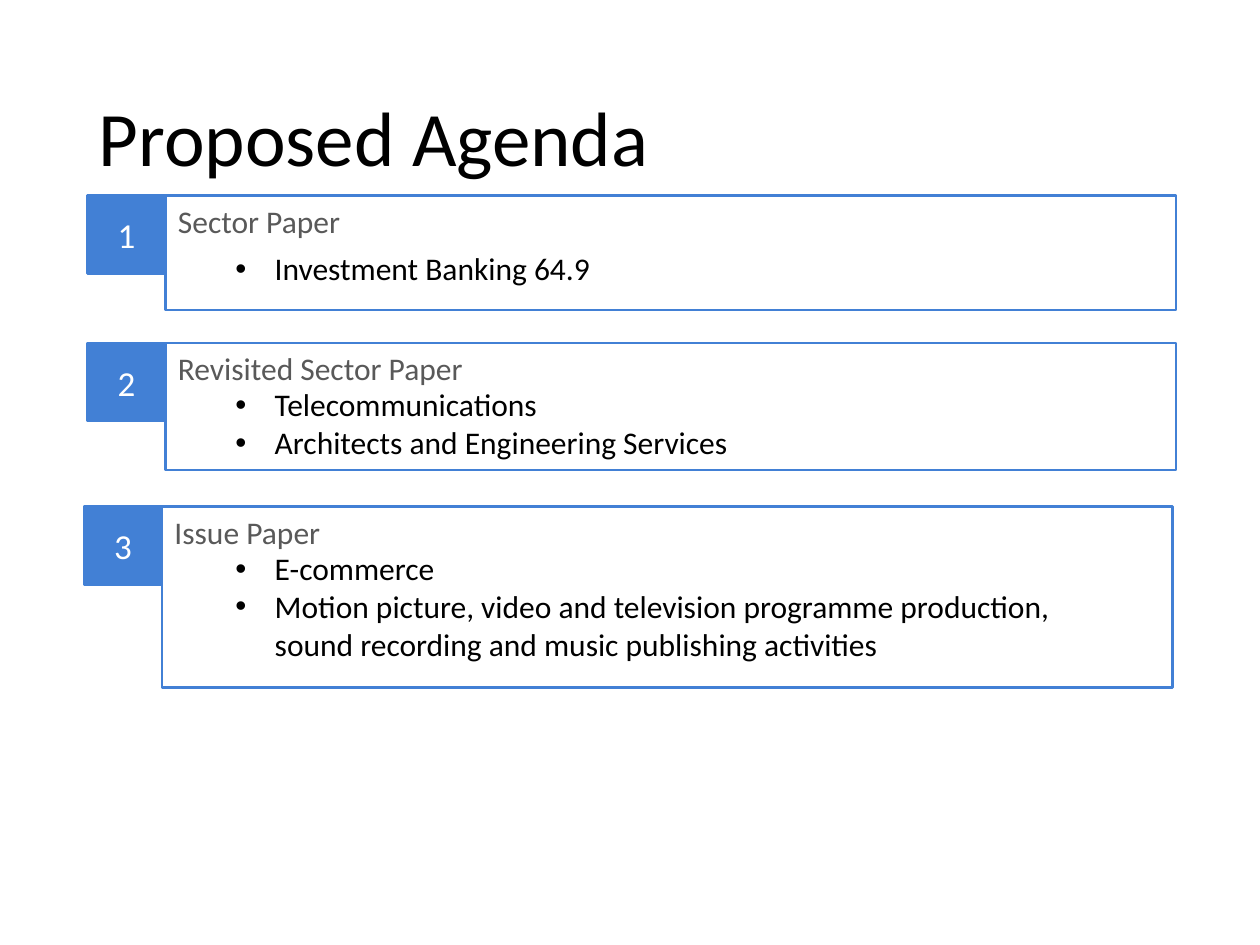
import pptx
import pptx.util
import pptx.dml.color
import pptx.enum.shapes
import pptx.enum.text
from lxml import etree

Pt = pptx.util.Pt
RGB = pptx.dml.color.RGBColor
ANCHOR = pptx.enum.text.MSO_ANCHOR
ALIGN = pptx.enum.text.PP_ALIGN

BLUE = RGB(0x42, 0x80, 0xD5)
GREY = RGB(0x59, 0x59, 0x59)
BLACK = RGB(0, 0, 0)
WHITE = RGB(255, 255, 255)
FACE = "Calibri"

TITLE = "Proposed Agenda"
# heading, bullets, left, top, panel height, bullet top, bullet width, bullet height
ITEMS = [
    ("Sector Paper", ["Investment Banking 64.9"],
     49.9, 111.6, 65.5, 139, 545, 29),
    ("Revisited Sector Paper",
     ["Telecommunications", "Architects and Engineering Services"],
     49.9, 196, 72.7, 216.7, 525, 72.7),
    ("Issue Paper",
     ["E-commerce",
      "Motion picture, video and television programme production, "
      "sound recording and music publishing activities"],
     47.9, 289.4, 103.7, 310.3, 525, 138),
]
SIDE = 44.7
PANEL = 577.5
INDENT = 22.5
LIST_LEFT = 127.4


def style(para, size, color):
    para.font.name = FACE
    para.font.size = Pt(size)
    para.font.color.rgb = color


def add_rect(slide, x, y, w, h, text, size, color):
    box = slide.shapes.add_shape(
        pptx.enum.shapes.MSO_SHAPE.RECTANGLE, Pt(x), Pt(y), Pt(w), Pt(h))
    box.shadow.inherit = False
    box.fill.background()
    box.line.color.rgb = BLUE
    box.line.width = Pt(1.5)
    box.text_frame.text = text
    style(box.text_frame.paragraphs[0], size, color)
    return box


def add_text(slide, x, y, w, h):
    frame = slide.shapes.add_textbox(Pt(x), Pt(y), Pt(w), Pt(h)).text_frame
    frame.word_wrap = True
    return frame


def add_bullet(para):
    props = para._p.get_or_add_pPr()
    props.set("marL", str(Pt(INDENT)))
    props.set("indent", str(-Pt(INDENT)))
    for tag, key, value in (("buFont", "typeface", "Arial"),
                            ("buChar", "char", "•")):
        etree.SubElement(props, pptx.oxml.ns.qn("a:" + tag)).set(key, value)


def add_item(slide, num, item):
    head, points, x, y, tall, top, wide, high = item
    badge = add_rect(slide, x, y, SIDE, SIDE, str(num), 20, WHITE)
    badge.fill.solid()
    badge.fill.fore_color.rgb = BLUE
    badge.text_frame.vertical_anchor = ANCHOR.MIDDLE
    badge.text_frame.paragraphs[0].alignment = ALIGN.CENTER

    panel = add_rect(slide, x + SIDE, y, PANEL, tall, head, 18, GREY)
    panel.text_frame.word_wrap = False
    panel.text_frame.vertical_anchor = ANCHOR.TOP
    panel.text_frame.paragraphs[0].alignment = ALIGN.LEFT

    frame = add_text(slide, LIST_LEFT, top, wide, high)
    frame.text = "\n".join(points)
    for para in frame.paragraphs:
        add_bullet(para)
        style(para, 18, BLACK)


def main():
    deck = pptx.Presentation()
    deck.slide_width, deck.slide_height = Pt(720), Pt(540)
    slide = deck.slides.add_slide(deck.slide_layouts[6])

    frame = add_text(slide, 49.5, 28.8, 621, 104.4)
    frame.vertical_anchor = ANCHOR.MIDDLE
    frame.text = TITLE
    frame.paragraphs[0].line_spacing = 0.9
    style(frame.paragraphs[0], 44, BLACK)

    for num, item in enumerate(ITEMS, 1):
        add_item(slide, num, item)
    deck.save("out.pptx")


if __name__ == "__main__":
    main()
